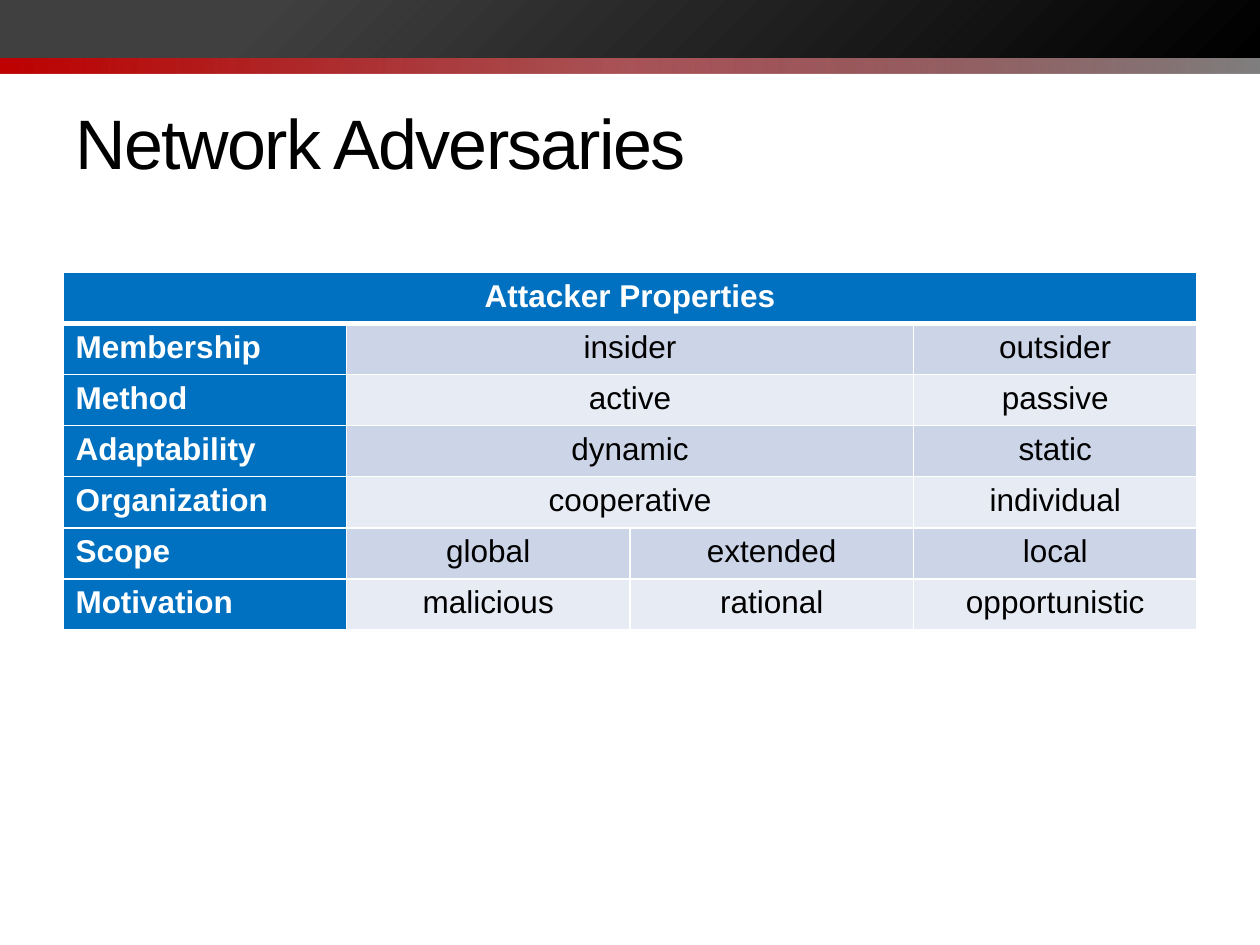
from lxml import etree
from pptx import Presentation
from pptx.dml.color import RGBColor
from pptx.enum.shapes import MSO_SHAPE
from pptx.enum.text import MSO_ANCHOR, PP_ALIGN
from pptx.oxml import parse_xml
from pptx.oxml.ns import nsdecls, qn
from pptx.util import Cm, Pt

RECTANGLE = MSO_SHAPE.RECTANGLE
MIDDLE = MSO_ANCHOR.MIDDLE
LEFT, CENTER = PP_ALIGN.LEFT, PP_ALIGN.CENTER

BLACK = RGBColor(0x00, 0x00, 0x00)
WHITE = RGBColor(0xFF, 0xFF, 0xFF)
CHARCOAL = RGBColor(0x40, 0x40, 0x40)
GRAY = RGBColor(0x80, 0x80, 0x80)
RED = RGBColor(0xC0, 0x00, 0x00)
MAROON = RGBColor(0x7F, 0x00, 0x07)
BLUE = RGBColor(0x00, 0x70, 0xC0)
BAND_DARK = RGBColor(0xCC, 0xD5, 0xE8)
BAND_LIGHT = RGBColor(0xE7, 0xEB, 0xF4)

PAGE_WIDTH, PAGE_HEIGHT = 25.4, 19.05
MARGIN = 1.27
CONTENT_WIDTH = PAGE_WIDTH - 2 * MARGIN

TABLE_TITLE = "Attacker Properties"
PROPERTIES = [
    ("Membership", "insider", "outsider"),
    ("Method", "active", "passive"),
    ("Adaptability", "dynamic", "static"),
    ("Organization", "cooperative", "individual"),
    ("Scope", "global", "extended", "local"),
    ("Motivation", "malicious", "rational", "opportunistic"),
]


class SlideBuilder:
    font_name = "Arial"
    title_size = Pt(40)
    table_size = Pt(18)
    thin, thick = Pt(1), Pt(3)

    def __init__(self, page):
        self.page = page

    def gradient_bar(self, top, height, angle, stops):
        """Full-width bar; each stop is (position %, colour, opacity %)."""
        bar = self.page.shapes.add_shape(
            RECTANGLE, 0, Cm(top), Cm(PAGE_WIDTH), Cm(height))
        bar.shadow.inherit = False
        bar.line.fill.background()
        bar.fill.gradient()
        gradient = bar.fill._xPr.find(qn("a:gradFill"))
        stop_list = gradient.find(qn("a:gsLst"))
        for stop in list(stop_list):
            stop_list.remove(stop)
        for position, color, opacity in stops:
            stop = etree.SubElement(stop_list, qn("a:gs"), pos=str(position * 1000))
            tint = etree.SubElement(stop, qn("a:srgbClr"), val=str(color))
            if opacity < 100:
                etree.SubElement(tint, qn("a:alpha"), val=str(opacity * 1000))
        direction = gradient.find(qn("a:lin"))
        direction.set("ang", str(angle * 60000))
        direction.set("scaled", "0")

    def style(self, para, size, color, bold=False, align=LEFT):
        para.alignment = align
        para.font.name = self.font_name
        para.font.size = size
        para.font.bold = bold
        para.font.color.rgb = color

    def title(self, text, top, height):
        box = self.page.shapes.add_textbox(
            Cm(MARGIN), Cm(top), Cm(CONTENT_WIDTH), Cm(height))
        frame = box.text_frame
        frame.word_wrap = True
        frame.vertical_anchor = MIDDLE
        para = frame.paragraphs[0]
        span = para.add_run()
        span.text = text
        self.style(para, self.title_size, BLACK)
        span.font._element.set("spc", "-100")  # tighten by 1 pt

    def borders(self, cell, top, bottom):
        properties = cell._tc.get_or_add_tcPr()
        widths = {"lnL": self.thin, "lnR": self.thin, "lnT": top, "lnB": bottom}
        for index, (side, width) in enumerate(widths.items()):
            properties.insert(index, parse_xml(
                f'<a:{side} {nsdecls("a")} w="{width}"><a:solidFill>'
                f'<a:srgbClr val="{WHITE}"/></a:solidFill></a:{side}>'))

    def write_cell(self, cell, text, color, bold, align):
        cell.text = text
        self.style(cell.text_frame.paragraphs[0], self.table_size, color, bold, align)

    def property_table(self, heading, rows, top, row_height):
        row_count, column_count = len(rows) + 1, max(map(len, rows))
        table = self.page.shapes.add_table(
            row_count, column_count, Cm(MARGIN), Cm(top),
            Cm(CONTENT_WIDTH), Cm(row_height * row_count)).table
        for column in table.columns:
            column.width = Cm(CONTENT_WIDTH / column_count)

        # Fills and borders
        for r, row in enumerate(table.rows):
            row.height = Cm(row_height)
            for c, cell in enumerate(row.cells):
                band = BAND_DARK if r % 2 else BAND_LIGHT
                cell.fill.solid()
                cell.fill.fore_color.rgb = BLUE if r == 0 or c == 0 else band
                self.borders(cell, self.thick if r == 1 else self.thin,
                             self.thick if r == 0 else self.thin)

        # Heading across all columns
        table.cell(0, 0).merge(table.cell(0, column_count - 1))
        self.write_cell(table.cell(0, 0), heading, WHITE, True, CENTER)

        # In shorter rows the first value also spans the spare column
        last = column_count - 1
        for r, (name, *values) in enumerate(rows, start=1):
            self.write_cell(table.cell(r, 0), name, WHITE, True, LEFT)
            if len(values) < last:
                table.cell(r, 1).merge(table.cell(r, column_count - len(values)))
            columns = [1, *range(column_count - len(values) + 1, column_count)]
            for c, value in zip(columns, values):
                self.write_cell(table.cell(r, c), value, BLACK, False, CENTER)


def main():
    deck = Presentation()
    deck.slide_width, deck.slide_height = Cm(PAGE_WIDTH), Cm(PAGE_HEIGHT)
    builder = SlideBuilder(deck.slides.add_slide(deck.slide_layouts[6]))

    # Header bars
    builder.gradient_bar(0.61, 0.87, 0,
                         [(0, RED, 100), (50, MAROON, 67), (100, GRAY, 100)])
    builder.gradient_bar(0, 1.17, 225,
                         [(0, BLACK, 100), (80, CHARCOAL, 100), (100, CHARCOAL, 100)])

    # Title and table
    builder.title("Network Adversaries", 1.48, 2.74)
    builder.property_table(TABLE_TITLE, PROPERTIES, 5.49, 1.03)

    deck.save("out.pptx")


if __name__ == "__main__":
    main()
